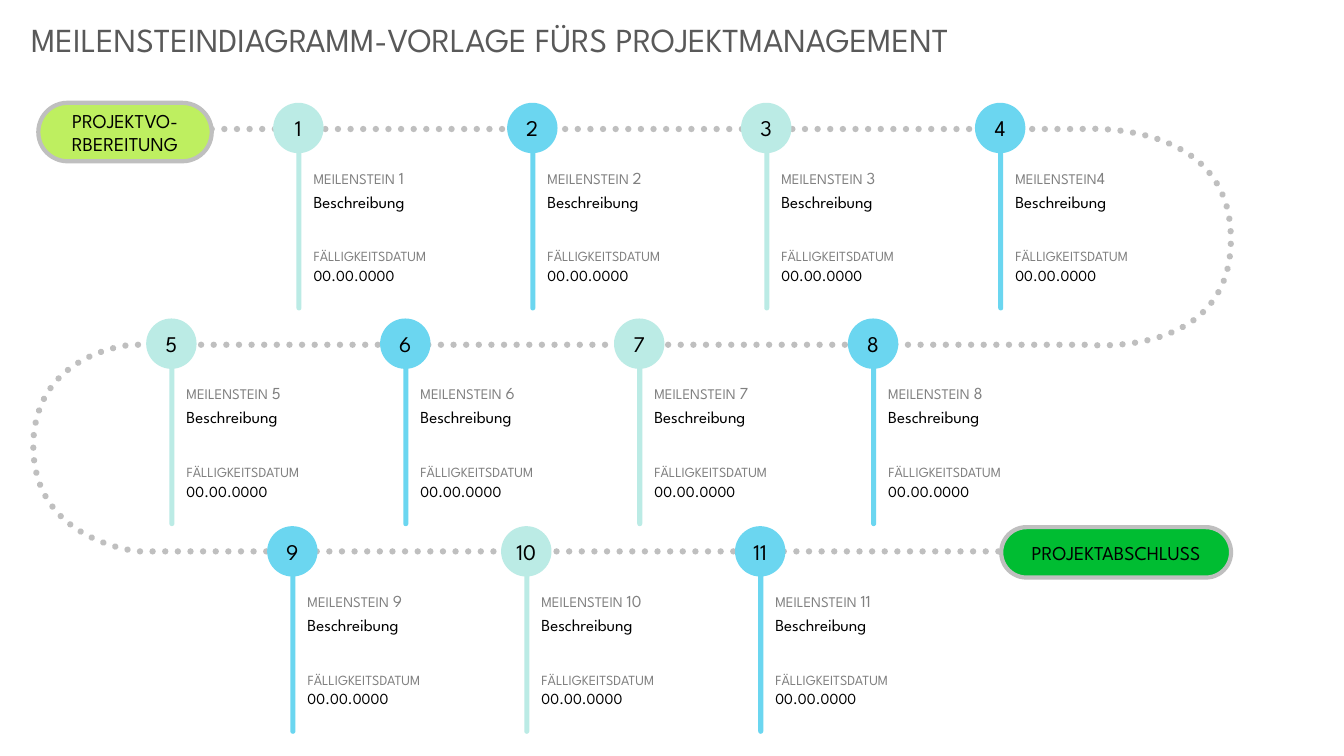
from dataclasses import dataclass

from pptx import Presentation
from pptx.dml.color import RGBColor
from pptx.enum.dml import MSO_LINE
from pptx.enum.shapes import MSO_SHAPE as SHAPE
from pptx.enum.text import MSO_ANCHOR as ANCHOR, MSO_AUTO_SIZE as AUTO, PP_ALIGN as ALIGN
from pptx.oxml.ns import qn
from pptx.util import Inches, Pt


@dataclass(frozen=True)
class Theme:
    font: str = "League Spartan"
    title: str = "595959"
    label: str = "808080"
    text: str = "000000"
    track: str = "BFBFBF"
    mint: str = "BBEBE5"
    sky: str = "6BD6F0"
    start: str = "BEEF60"
    finish: str = "00BD32"
    title_size: float = 24
    number_size: float = 16
    stage_size: float = 14
    body_size: float = 12
    date_size: float = 11
    label_size: float = 10.5
    due_size: float = 10


T = Theme()
PITCH = 2.32
CIRCLE = 0.5
# left of the first circle, top, milestone numbers, alternating colours
ROWS = [
    (2.71, 1.02, range(1, 5), (T.mint, T.sky)),
    (1.45, 3.16, range(5, 9), (T.mint, T.sky)),
    (2.65, 5.22, range(9, 12), (T.sky, T.mint)),
]
TRACK_START = (2.1, 1.28)
# each entry is a line end point, or two control points and an end point
TRACK = [
    [(10.73, 1.28)],
    [(10.73, 1.28), (12.21, 1.17), (12.21, 2.37)],
    [(12.21, 3.57), (10.78, 3.42), (10.78, 3.42)],
    [(1.31, 3.42)],
    [(1.31, 3.42), (0.33, 3.49), (0.33, 4.43)],
    [(0.33, 5.37), (1.37, 5.47), (1.37, 5.47)],
    [(10.28, 5.47)],
]


def rgb(value):
    return RGBColor.from_string(value)


def style(font, size, color):
    font.name, font.size, font.color.rgb = T.font, Pt(size), rgb(color)


def clear_margins(tf):
    tf.margin_left = tf.margin_top = tf.margin_right = tf.margin_bottom = 0


def add_text(shapes, x, y, w, h, runs):
    """Add a one-line text box; runs are (text, size, color)."""
    box = shapes.add_textbox(Inches(x), Inches(y), Inches(w), Inches(h))
    tf = box.text_frame
    tf.word_wrap = True
    clear_margins(tf)
    for text, size, color in runs:
        r = tf.paragraphs[0].add_run()
        r.text = text
        style(r.font, size, color)
    return tf


def add_filled(shapes, kind, x, y, w, h, fill):
    sp = shapes.add_shape(kind, Inches(x), Inches(y), Inches(w), Inches(h))
    sp.shadow.inherit = False
    sp.fill.solid()
    sp.fill.fore_color.rgb = rgb(fill)
    sp.line.fill.background()
    if kind == SHAPE.ROUNDED_RECTANGLE:
        sp.adjustments[0] = 0.5
    return sp


def center_text(sp, text, size):
    tf = sp.text_frame
    tf.word_wrap = True
    clear_margins(tf)
    tf.vertical_anchor = ANCHOR.MIDDLE
    tf.text = text
    p = tf.paragraphs[0]
    p.alignment = ALIGN.CENTER
    style(p.runs[0].font, size, T.text)


def add_stage(s, x, y, w, h, fill, text):
    sp = add_filled(s.shapes, SHAPE.ROUNDED_RECTANGLE, x, y, w, h, fill)
    sp.line.color.rgb = rgb(T.track)
    sp.line.width = Pt(3)
    center_text(sp, text, T.stage_size)


def curve_points(p0, p1, p2, p3, steps=24):
    """Sample a cubic Bezier curve, leaving out its first point."""
    for i in range(1, steps + 1):
        t = i / steps
        u = 1 - t
        yield tuple(u**3 * a + 3 * u * u * t * b + 3 * u * t * t * c + t**3 * d
                    for a, b, c, d in zip(p0, p1, p2, p3))


def add_track(s):
    points = [TRACK_START]
    for part in TRACK:
        points += part if len(part) == 1 else curve_points(points[-1], *part)
    start, *rest = [(Inches(x), Inches(y)) for x, y in points]
    builder = s.shapes.build_freeform(*start)
    builder.add_line_segments(rest, close=False)
    sp = builder.convert_to_shape()
    sp.shadow.inherit = False
    sp.fill.background()
    sp.line.color.rgb = rgb(T.track)
    sp.line.width = Pt(4.5)
    sp.line.dash_style = MSO_LINE.ROUND_DOT
    sp._element.spPr.find(qn("a:ln")).set("cap", "rnd")


def add_milestone(s, x, y, number, color):
    shapes = s.shapes.add_group_shape().shapes
    add_filled(shapes, SHAPE.ROUNDED_RECTANGLE, x + 0.23, y + 0.19, 0.05, 1.87, color)
    left = x + 0.4
    heading = [("MEILENSTEIN", T.label_size, T.label), (str(number), T.body_size, T.label)]
    if number != 4:
        heading.insert(1, (" ", T.date_size, T.label))
    add_text(shapes, left, y + 0.64, 1.17, 0.26, heading)
    add_text(shapes, left, y + 0.88, 1.37, 0.57, [("Beschreibung", T.body_size, T.text)])
    due = add_text(shapes, left, y + 1.44, 1.75, 0.2,
                   [("FÄLLIGKEITSDATUM", T.due_size, T.label)])
    due.paragraphs[0].space_after = Pt(3)
    add_text(shapes, left, y + 1.62, 0.9, 0.26, [("00.00.0000", T.date_size, T.text)])
    circle = add_filled(shapes, SHAPE.OVAL, x, y, CIRCLE, CIRCLE, color)
    center_text(circle, str(number), T.number_size)


def main():
    prs = Presentation()
    prs.slide_width, prs.slide_height = Inches(13.33), Inches(7.5)
    s = prs.slides.add_slide(prs.slide_layouts[6])
    title = add_text(s.shapes, 0.21, 0.14, 10.88, 0.5,
                     [("MEILENSTEINDIAGRAMM-VORLAGE FÜRS PROJEKTMANAGEMENT",
                       T.title_size, T.title)])
    title.margin_left = title.margin_right = Inches(0.1)
    title.margin_top = title.margin_bottom = Inches(0.05)
    title.auto_size = AUTO.SHAPE_TO_FIT_TEXT
    add_track(s)
    add_stage(s, 0.38, 1.02, 1.72, 0.58, T.start, "PROJEKTVO-RBEREITUNG")
    for left, top, numbers, colors in ROWS:
        for col, number in enumerate(numbers):
            add_milestone(s, left + col * PITCH, top, number, colors[col % 2])
    add_stage(s, 9.93, 5.23, 2.28, 0.5, T.finish, "PROJEKTABSCHLUSS")
    prs.save("out.pptx")


if __name__ == "__main__":
    main()
